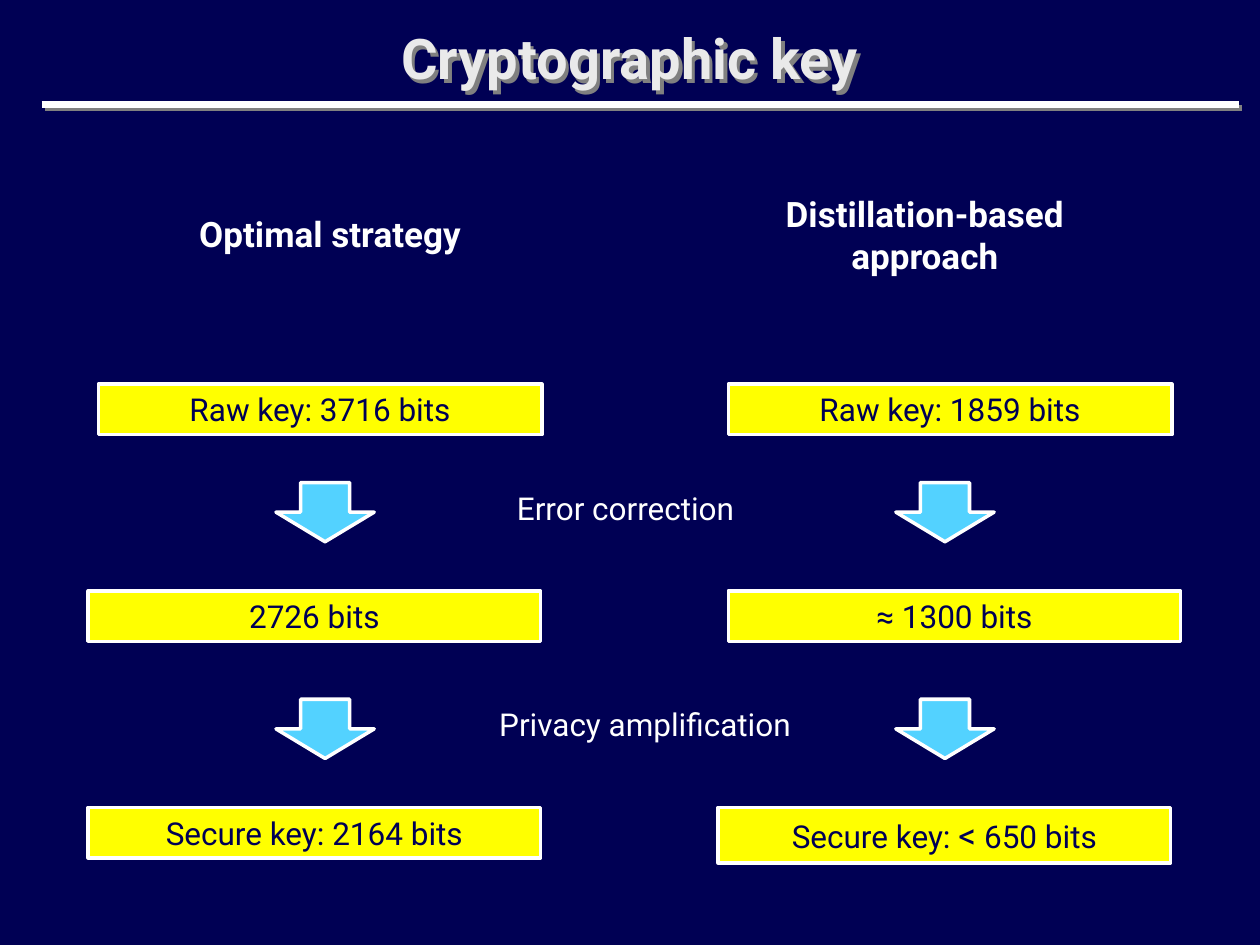
import pptx
import pptx.util
import pptx.dml.color
import pptx.enum.shapes
import pptx.enum.text
import pptx.oxml
import pptx.oxml.ns

Inches, Pt = pptx.util.Inches, pptx.util.Pt
SHAPE = pptx.enum.shapes.MSO_SHAPE
ANCHOR = pptx.enum.text.MSO_ANCHOR

# Content: each column has a heading, three keys (left, width, height, runs) and arrows
TITLE = "Cryptographic key"
COLS = [
    {"head": ("Optimal strategy", (0.94, 1.64, 3.36, 0.44)),
     "arrow": 2.19,
     "keys": [(0.78, 3.52, 0.4, ["Raw key: 3716 bits"]),
              (0.7, 3.59, 0.4, ["2726 bits"]),
              (0.7, 3.59, 0.4, ["Secure key: 2164 bits"])]},
    {"head": ("Distillation-based approach", (5.7, 1.48, 3.28, 0.77)),
     "arrow": 7.11,
     "keys": [(5.78, 3.52, 0.4, ["Raw key: 1859 bits"]),
              (5.78, 3.59, 0.4, ["≈ 1300 bits"]),
              (5.7, 3.59, 0.44, ["Secure key: ", "<", " 650 bits"])]},
]
STEPS = [("Error correction", 3.44, 3.05), ("Privacy amplification", 3.36, 3.52)]
KEY_TOPS = (3.05, 4.69, 6.41)
STEP_TOPS = (3.83, 5.55)

THEME = {
    "back": "000054", "white": "FFFFFF", "key": "FFFF00", "arrow": "53D2FF",
    "shade": "808080", "edge": 2, "rule": 3.75,
    "title": {"size": 32, "bold": True, "color": "EAEAEA"},
    "head": {"size": 20, "bold": True, "color": "FFFFFF"},
    "step": {"size": 18, "bold": False, "color": "FFFFFF"},
    "bits": {"size": 18, "bold": False, "color": "000054"},
    "sign": {"size": 20, "bold": False, "color": "000054"},
}


def rgb(name):
    return pptx.dml.color.RGBColor.from_string(name)


def place(box):
    return [Inches(v) for v in box]


def shade(shape):
    """Cast a hard grey shadow down and to the right."""
    shape._element.spPr.append(pptx.oxml.parse_xml(
        f'<a:effectLst {pptx.oxml.ns.nsdecls("a")}>'
        f'<a:outerShdw dist="{Pt(2.8)}" dir="2700000" algn="ctr" rotWithShape="0">'
        f'<a:srgbClr val="{THEME["shade"]}"/></a:outerShdw></a:effectLst>'))


def write(shape, runs, style, anchor=ANCHOR.TOP):
    frame = shape.text_frame
    for name, value in {"word_wrap": True, "vertical_anchor": anchor}.items():
        setattr(frame, name, value)
    para = frame.paragraphs[0]
    para.alignment = pptx.enum.text.PP_ALIGN.CENTER
    for text in runs:
        look = THEME["sign" if text == "<" else style]
        run = para.add_run()
        run.text = text
        form = {"name": "Roboto", "size": Pt(look["size"]), "bold": look["bold"]}
        for name, value in form.items():
            setattr(run.font, name, value)
        run.font.color.rgb = rgb(look["color"])


def label(slide, box, text, style, anchor=ANCHOR.TOP):
    shape = slide.shapes.add_textbox(*place(box))
    write(shape, [text], style, anchor)
    return shape


def block(slide, kind, box, fill):
    shape = slide.shapes.add_shape(kind, *place(box))
    shape.shadow.inherit = False
    shape.fill.solid()
    shape.fill.fore_color.rgb = rgb(THEME[fill])
    shape.line.color.rgb = rgb(THEME["white"])
    shape.line.width = Pt(THEME["edge"])
    return shape


def main():
    deck = pptx.Presentation()
    deck.slide_width, deck.slide_height = Inches(10), Inches(7.5)
    slide = deck.slides.add_slide(deck.slide_layouts[6])
    slide.background.fill.solid()
    slide.background.fill.fore_color.rgb = rgb(THEME["back"])

    # Title and rule
    rule = slide.shapes.add_connector(
        pptx.enum.shapes.MSO_CONNECTOR.STRAIGHT, *place((0.33, 0.83, 9.83, 0.83)))
    rule.line.color.rgb = rgb(THEME["white"])
    rule.line.width = Pt(THEME["rule"])
    shade(rule)
    shade(label(slide, (0, -0.17, 10, 1.25), TITLE, "title", ANCHOR.MIDDLE))

    # Columns: heading, keys and the arrows between them
    for col in COLS:
        text, box = col["head"]
        label(slide, box, text, "head")
        for top, (left, wide, high, runs) in zip(KEY_TOPS, col["keys"]):
            key = block(slide, SHAPE.RECTANGLE, (left, top, wide, high), "key")
            write(key, runs, "bits")
        for top in STEP_TOPS:
            block(slide, SHAPE.DOWN_ARROW, (col["arrow"], top, 0.78, 0.47), "arrow")

    # Step names shared by both columns
    for top, (text, left, wide) in zip(STEP_TOPS, STEPS):
        label(slide, (left, top, wide, 0.4), text, "step")

    deck.save("out.pptx")


if __name__ == "__main__":
    main()
